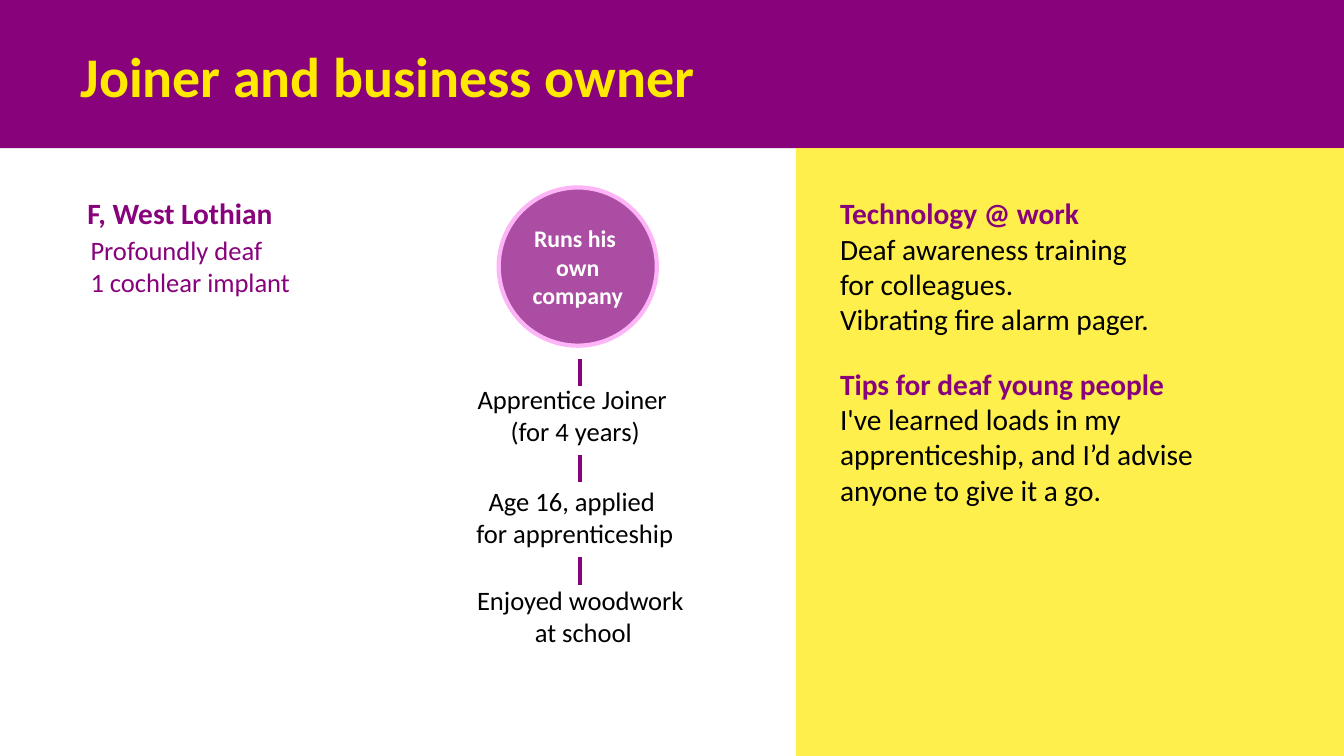
from lxml import etree
from pptx import Presentation
from pptx.dml.color import RGBColor
from pptx.enum.shapes import MSO_CONNECTOR, MSO_SHAPE
from pptx.enum.text import MSO_ANCHOR, PP_ALIGN
from pptx.oxml.ns import qn
from pptx.util import Inches, Pt

RECT, OVAL = MSO_SHAPE.RECTANGLE, MSO_SHAPE.OVAL
LINE = MSO_CONNECTOR.STRAIGHT
TOP, MIDDLE = MSO_ANCHOR.TOP, MSO_ANCHOR.MIDDLE
LEFT, CENTER = PP_ALIGN.LEFT, PP_ALIGN.CENTER
COLORS = {
    "plum": "87027B", "orchid": "AB4EA3", "pink": "FEB5F7",
    "yellow": "FFE900", "white": "FFFFFF", "black": "000000",
}


def rgb(name):
    return RGBColor.from_string(COLORS[name])


class Deck:
    """Hold the style and the current slide, and draw each kind of element."""

    font = "Calibri"

    def __init__(self, width, height):
        self.prs = Presentation()
        self.prs.slide_width = Inches(width)
        self.prs.slide_height = Inches(height)
        self.slide = self.prs.slides.add_slide(self.prs.slide_layouts[6])

    def style(self, run, size, color, bold=False):
        run.font.name = self.font
        run.font.size = Pt(size)
        run.font.bold = bold
        run.font.color.rgb = rgb(color)

    def label(self, frame, text, size, color, bold=False, align=LEFT, anchor=TOP):
        frame.word_wrap = True
        frame.vertical_anchor = anchor
        frame.text = text
        for para in frame.paragraphs:
            para.alignment = align
            for run in para.runs:
                self.style(run, size, color, bold)

    def text(self, box, text, size, color, **look):
        frame = self.slide.shapes.add_textbox(*map(Inches, box)).text_frame
        self.label(frame, text, size, color, **look)
        return frame

    def shape(self, kind, box, fill, edge=None, alpha=None):
        shape = self.slide.shapes.add_shape(kind, *map(Inches, box))
        shape.shadow.inherit = False
        shape.fill.solid()
        shape.fill.fore_color.rgb = rgb(fill)
        if edge:
            shape.line.color.rgb = rgb(edge)
            shape.line.width = Pt(3)
        else:
            shape.line.fill.background()
        if alpha:
            tint = shape._element.spPr.find(".//" + qn("a:srgbClr"))
            etree.SubElement(tint, qn("a:alpha")).set("val", str(alpha * 1000))
        return shape

    def tick(self, x, y, length):
        ends = map(Inches, (x, y, x, y + length))
        line = self.slide.shapes.add_connector(LINE, *ends)
        line.line.color.rgb = rgb("plum")
        line.line.width = Pt(3)
        etree.SubElement(line._element.spPr, qn("a:effectLst"))

    def note(self, top, head, body):
        box = (8.24, top, 4.57, 1.51)
        frame = self.text(box, f"{head}\v{body}", 21, "black")
        self.style(frame.paragraphs[0].runs[0], 21, "plum", True)


def main():
    deck = Deck(13.34, 7.5)
    deck.shape(RECT, (0, 0, 13.34, 1.47), "plum")
    deck.shape(RECT, (7.9, 1.47, 5.44, 6.03), "yellow", alpha=70)
    title = deck.text((0.67, 0.35, 9.03, 0.79), "Joiner and business owner",
                      40, "yellow", bold=True, anchor=MIDDLE)
    title.margin_left = title.margin_right = Inches(0.13)

    deck.text((0.77, 1.89, 4.23, 0.45), "F, West Lothian", 21, "plum", bold=True)
    deck.text((0.8, 2.27, 2.71, 0.74), "Profoundly deaf\n1 cochlear implant",
              19, "plum")

    goal = deck.shape(OVAL, (4.95, 1.86, 1.57, 1.57), "orchid", "pink").text_frame
    deck.label(goal, "Runs his \vown company", 17, "white", bold=True,
               align=CENTER, anchor=MIDDLE)
    goal.margin_left = goal.margin_right = goal.margin_top = goal.margin_bottom = 0

    steps = [
        (3.56, (3.81, 3.75, 3.8, 0.74), "Apprentice Joiner \v(for 4 years)"),
        (4.51, (4.29, 4.76, 2.83, 0.74), "Age 16, applied \vfor apprenticeship"),
        (5.53, (4.47, 5.74, 2.64, 0.74), "Enjoyed woodwork \vat school"),
    ]
    for y, box, step in steps:
        deck.tick(5.76, y, 0.27)
        deck.text(box, step, 19, "black", align=CENTER)

    deck.note(1.89, "Technology @ work",
              "Deaf awareness training \vfor colleagues. \vVibrating fire alarm pager.")
    deck.note(3.58, "Tips for deaf young people",
              "I've learned loads in my apprenticeship, "
              "and I’d advise anyone to give it a go.")
    deck.prs.save("out.pptx")


if __name__ == "__main__":
    main()
